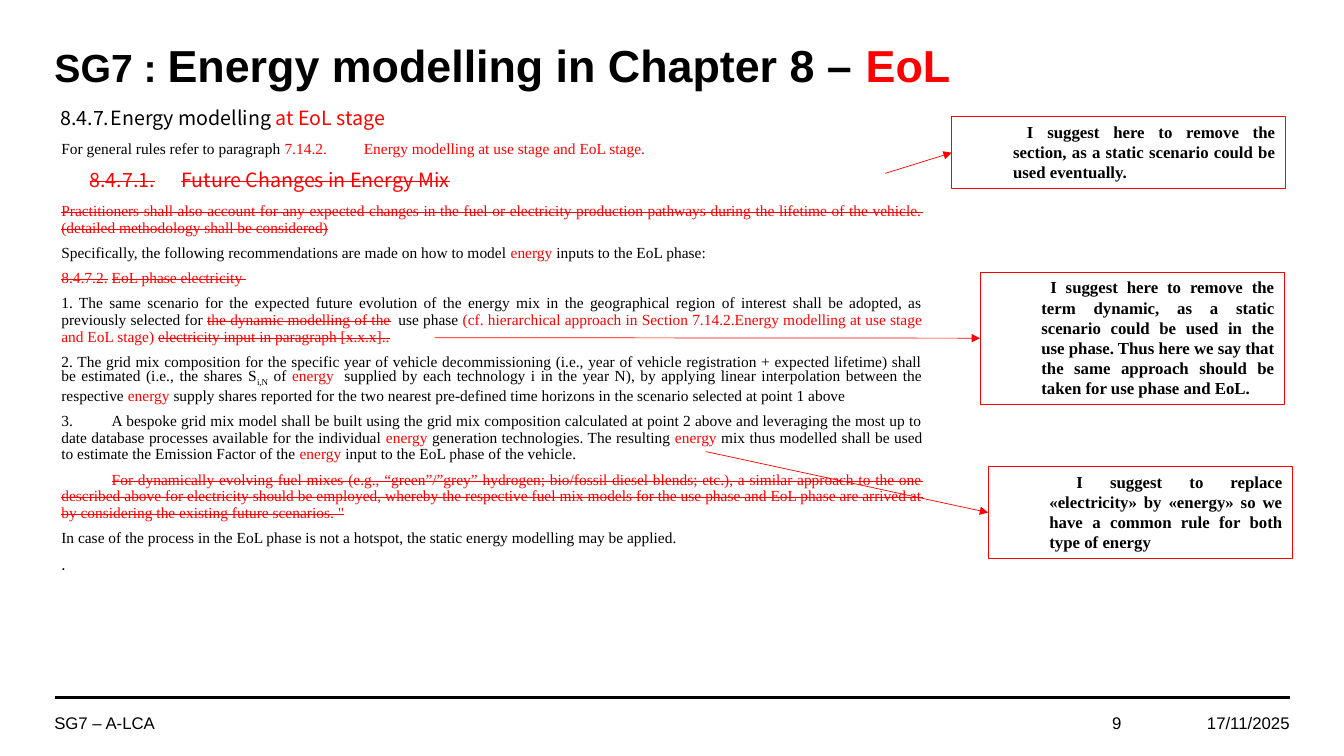
from lxml.etree import SubElement
from pptx import Presentation
from pptx.dml.color import RGBColor
from pptx.enum.shapes import MSO_CONNECTOR, MSO_SHAPE
from pptx.enum.text import MSO_ANCHOR, MSO_AUTO_SIZE, PP_ALIGN
from pptx.oxml.ns import qn
from pptx.util import Inches, Pt

BLACK, RED, WHITE = "000000", "FF0000", "FFFFFF"
ARIAL, SERIF, SANS = "Arial", "Times New Roman", "Noto Sans CJK JP"

# Run styles used in the body text
CHANGED = {"color": RED}
DELETED = {"color": RED, "strike": True}
SUBSCRIPT = {"baseline": -25}
GAP = {"font": SANS, "size": 10}
ENERGY = ("energy", CHANGED)

# Paragraph formats: (paragraph settings, base run style)
HEADING = ({"left": 0.5, "spacing": 1.07, "after": 8}, {"font": SANS, "size": 14})
SUBHEADING = ({"left": 1.2, "first": -0.41, "spacing": 1.07, "after": 8, "tab": 1.2},
              {"font": SANS, "size": 14})
BODY = ({"align": PP_ALIGN.JUSTIFY, "left": 0.51, "spacing": Pt(12), "after": 6},
        {"font": SERIF, "size": 11})
CLOSING = ({"left": 0.51, "after": 10}, {"font": SANS, "size": 11})
COMMENT = ({"align": PP_ALIGN.JUSTIFY, "left": 0.51, "after": 6},
           {"font": SERIF, "size": 12, "bold": True})
FOOTER = ({}, {"font": ARIAL, "size": 12})
FOOTER_RIGHT = ({"align": PP_ALIGN.RIGHT}, FOOTER[1])
TITLE = ({"align": PP_ALIGN.LEFT, "spacing": 0.9}, {"font": ARIAL, "size": 32, "bold": True})

TITLE_RUNS = [("SG7 : ", {"size": 28}), ("Energy modelling in Chapter 8 – ", {}), ("EoL", CHANGED)]

SECTION = [
    (HEADING, [("8.4.7.\tEnergy modelling ", {}), ("at EoL stage", CHANGED)]),
    (BODY, [("For general rules refer to paragraph ", {}),
            ("7.14.2.\tEnergy modelling at use stage and EoL stage.", CHANGED)]),
    (SUBHEADING, [("8.4.7.1.\tFuture Changes in Energy Mix", DELETED)]),
    (BODY, [("Practitioners shall also account for any expected changes in the fuel or electricity "
             "production pathways during the lifetime of the vehicle. "
             "(detailed methodology shall be considered)", DELETED)]),
    (BODY, [("Specifically, the following recommendations are made on how to model ", {}),
            ENERGY, (" inputs to the EoL phase:", {})]),
    (BODY, [("8.4.7.2.\tEoL phase electricity ", DELETED)]),
    (BODY, [("1. The same scenario for the expected future evolution of the energy mix in the "
             "geographical region of interest shall be adopted, as previously selected for ", {}),
            ("the dynamic modelling of the", DELETED), (" ", CHANGED), (" ", GAP),
            ("use phase ", {}),
            ("(cf. hierarchical approach in Section 7.14.2.Energy modelling at use stage "
             "and EoL stage) ", CHANGED),
            ("electricity input in paragraph [x.x.x]..", DELETED)]),
    (BODY, [("2. The grid mix composition for the specific year of vehicle decommissioning (i.e., "
             "year of vehicle registration + expected lifetime) shall be estimated (i.e., "
             "the shares S", {}),
            ("i,N", SUBSCRIPT), (" of ", {}), ("energy ", CHANGED), (" ", GAP),
            ("supplied by each technology i in the year N), by applying linear interpolation "
             "between the respective ", {}),
            ENERGY,
            (" supply shares reported for the two nearest pre-defined time horizons in the "
             "scenario selected at point 1 above", {})]),
    (BODY, [("3.\tA bespoke grid mix model shall be built using the grid mix composition calculated "
             "at point 2 above and leveraging the most up to date database processes available "
             "for the individual ", {}),
            ENERGY, (" generation technologies. The resulting ", {}),
            ENERGY, (" mix thus modelled shall be used to estimate the Emission Factor of the ", {}),
            ENERGY, (" input to the EoL phase of the vehicle.", {})]),
    (BODY, [("\t", {}),
            ("For dynamically evolving fuel mixes (e.g., “green”/”grey” hydrogen; bio/fossil diesel "
             "blends; etc.), a similar approach to the one described above for electricity should "
             "be employed, whereby the respective fuel mix models for the use phase and EoL phase "
             "are arrived at by considering the existing future scenarios. \"", DELETED)]),
    (BODY, [("In case of the process in the EoL phase is not a hotspot, the static energy "
             "modelling may be applied.", {})]),
    (CLOSING, [(".", {})]),
]

# Comment boxes: place, start of the arrow that points at the box, text
COMMENTS = [
    ((9.44, 1.16, 3.31, 0.71), (8.78, 1.72),
     " I suggest here to remove the section, as a static scenario could be used eventually."),
    ((9.72, 2.7, 3.02, 1.31), (4.31, 3.35),
     " I suggest here to remove the term dynamic, as a static scenario could be used in the use "
     "phase. Thus here we say that the same approach should be taken for use phase and EoL."),
    ((9.8, 4.63, 3.02, 0.91), (7, 4.48),
     " I suggest to replace «electricity» by «energy» so we have a common rule for both type "
     "of energy"),
]

FOOTERS = [
    ((0.44, 6.97, 4.84, 0.4), FOOTER, "SG7 – A-LCA"),
    ((10.44, 6.97, 0.78, 0.4), FOOTER_RIGHT, "9"),
    ((11.64, 6.97, 1.25, 0.4), FOOTER_RIGHT, "17/11/2025"),
]


def rgb(color):
    return RGBColor.from_string(color)


def inches(values):
    return [Inches(value) for value in values]


class SlideBuilder:
    def __init__(self, page):
        self.page = page

    def add_paragraphs(self, shape, paragraphs, anchor):
        """Fill a shape with (format, runs) paragraphs."""
        frame = shape.text_frame
        frame.word_wrap = True
        frame.vertical_anchor = anchor
        for index, ((settings, base), runs) in enumerate(paragraphs):
            para = frame.paragraphs[0] if index == 0 else frame.add_paragraph()
            self.format_paragraph(para, **settings)
            for text, changes in runs:
                self.add_run(para, text, **{**base, **changes})

    def format_paragraph(self, para, align=PP_ALIGN.LEFT, left=0, first=0,
                         spacing=None, after=0, tab=None):
        properties = para._p.get_or_add_pPr()
        properties.set("marL", str(Inches(left)))
        properties.set("indent", str(Inches(first)))
        if tab:
            stops = SubElement(properties, qn("a:tabLst"))
            SubElement(stops, qn("a:tab"), pos=str(Inches(tab)), algn="l")
        para.alignment = align
        para.line_spacing = spacing
        para.space_before = Pt(0)
        para.space_after = Pt(after)

    def add_run(self, para, text, font, size, color=BLACK, bold=False, strike=False, baseline=0):
        span = para.add_run()
        span.text = text
        span.font.name = font
        span.font.size = Pt(size)
        span.font.bold = bold
        span.font.color.rgb = rgb(color)
        if strike:
            span.font._element.set("strike", "sngStrike")
        if baseline:
            span.font._element.set("baseline", str(baseline * 1000))

    def title(self, place, runs):
        holder = self.page.shapes.title
        holder.left, holder.top, holder.width, holder.height = inches(place)
        self.add_paragraphs(holder, [(TITLE, runs)], MSO_ANCHOR.BOTTOM)
        holder.text_frame.auto_size = MSO_AUTO_SIZE.NONE

    def label(self, place, style, text):
        box = self.page.shapes.add_textbox(*inches(place))
        self.add_paragraphs(box, [(style, [(text, {})])], MSO_ANCHOR.MIDDLE)

    def panel(self, place, paragraphs, fill=None, line=None):
        box = self.page.shapes.add_shape(MSO_SHAPE.RECTANGLE, *inches(place))
        box.shadow.inherit = False
        if fill:
            box.fill.solid()
            box.fill.fore_color.rgb = rgb(fill)
        else:
            box.fill.background()
        if line:
            box.line.color.rgb = rgb(line)
            box.line.width = Pt(0.75)
        else:
            box.line.fill.background()
        self.add_paragraphs(box, paragraphs, MSO_ANCHOR.TOP)
        box.text_frame.auto_size = MSO_AUTO_SIZE.SHAPE_TO_FIT_TEXT
        return box

    def line(self, start, end, color, width):
        line = self.page.shapes.add_connector(MSO_CONNECTOR.STRAIGHT, *inches(start + end))
        line.line.color.rgb = rgb(color)
        line.line.width = Pt(width)
        SubElement(line._element.spPr, qn("a:effectLst"))
        return line

    def arrow_to(self, box, start):
        """Draw an arrow that ends at the middle of the box's left side."""
        arrow = self.line(start, start, RED, 0.5)
        arrow.end_connect(box, 1)
        SubElement(arrow.line._get_or_add_ln(), qn("a:tailEnd"), type="triangle")


def main():
    deck = Presentation()
    deck.slide_width, deck.slide_height = Inches(13.33), Inches(7.5)
    builder = SlideBuilder(deck.slides.add_slide(deck.slide_layouts[5]))
    builder.line((0.55, 6.92), (12.79, 6.92), BLACK, 1.5)
    builder.panel((0, 0.99, 9.25, 4.8), SECTION, fill=WHITE)
    builder.title((0.44, 0.24, 12.03, 0.72), TITLE_RUNS)
    for footer in FOOTERS:
        builder.label(*footer)
    for place, start, text in COMMENTS:
        box = builder.panel(place, [(COMMENT, [(text, {})])], line=RED)
        builder.arrow_to(box, start)
    deck.save("out.pptx")


if __name__ == "__main__":
    main()
